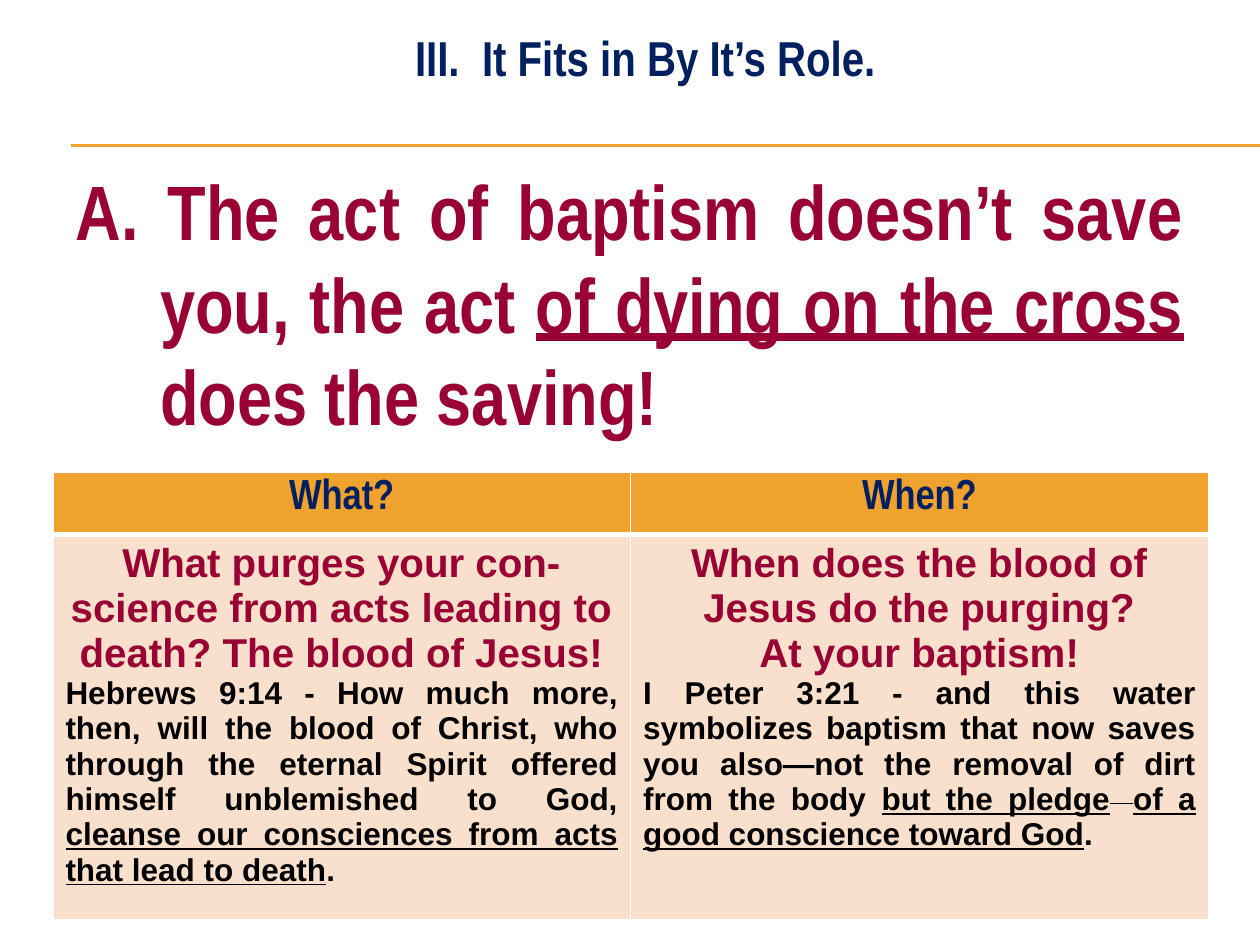
from lxml.etree import SubElement
from pptx import Presentation
from pptx.dml.color import RGBColor
from pptx.enum.shapes import MSO_CONNECTOR
from pptx.enum.text import MSO_ANCHOR, MSO_AUTO_SIZE, PP_ALIGN as ALIGN
from pptx.oxml.ns import qn
from pptx.util import Inches, Pt

NAVY = RGBColor(0x00, 0x20, 0x60)
MAROON = RGBColor(0x99, 0x00, 0x33)
ORANGE = RGBColor(0xF0, 0xA2, 0x2E)
PEACH = RGBColor(0xF9, 0xE0, 0xCD)
BLACK = RGBColor(0x00, 0x00, 0x00)
NARROW, ARIAL = "Arial Narrow", "Arial"

# Text styles: font, size, colour, alignment
TITLE = (NARROW, 28, NAVY, ALIGN.CENTER)
POINT = (NARROW, 44, MAROON, ALIGN.JUSTIFY)
HEADER = (NARROW, 24, NAVY, ALIGN.CENTER)
QUESTION = (ARIAL, 23, MAROON, ALIGN.CENTER)
VERSE = (ARIAL, 18, BLACK, ALIGN.JUSTIFY)

# Content: each paragraph is a style and its spans of (text, marks),
# where the mark u underlines and ^ raises
title_text = [(TITLE, [("III.  It Fits in By It’s Role.", "")])]
point_text = [(POINT, [
    ("A. The act of baptism doesn’t save you, the act ", ""),
    ("of dying on the cross", "u"),
    (" does the saving!", ""),
])]
table_rows = [
    [[(HEADER, [("What?", "")])], [(HEADER, [("When?", "")])]],
    [
        [
            (QUESTION, [("What purges your con-science from acts leading to "
                         "death? The blood of Jesus!", "")]),
            (VERSE, [
                ("Hebrews 9:14 - How much more, then, will the blood of Christ, "
                 "who through the eternal Spirit offered himself unblemished "
                 "to God, ", ""),
                ("cleanse our consciences from acts that lead to death", "u"),
                (".", ""),
            ]),
        ],
        [
            (QUESTION, [("When does the blood of Jesus do the purging?", "")]),
            (QUESTION, [("At your baptism!", "")]),
            (VERSE, [
                ("I Peter 3:21 - and this water symbolizes baptism that now "
                 "saves you also—not the removal of dirt from the body ", ""),
                ("but the pledge", "u"),
                ("  ", "u^"),
                ("of a good conscience toward God", "u"),
                (".", ""),
            ]),
        ],
    ],
]
row_heights = [0.49, 3.06]
row_fills = [ORANGE, PEACH]
bottom_widths = [3, 1]


def write(frame, paragraphs):
    for index, (style, spans) in enumerate(paragraphs):
        para = frame.add_paragraph() if index else frame.paragraphs[0]
        font = para.font
        font.name, size, font.color.rgb, para.alignment = style
        font.size, font.bold = Pt(size), True
        for text, marks in spans:
            span = para.add_run()
            span.text = text
            if "u" in marks:
                span.font.underline = True
            if "^" in marks:
                span._r.get_or_add_rPr().set("baseline", "30000")


def place(shape, left, top, width, height):
    shape.left, shape.top = Inches(left), Inches(top)
    shape.width, shape.height = Inches(width), Inches(height)


def add_borders(cell, bottom):
    props = cell._tc.get_or_add_tcPr()
    for side, width in (("L", 1), ("R", 1), ("T", 1), ("B", bottom)):
        line = SubElement(props, qn(f"a:ln{side}"), w=str(Pt(width)))
        fill = SubElement(line, qn("a:solidFill"))
        SubElement(fill, qn("a:srgbClr"), val="FFFFFF")


deck = Presentation()
deck.slide_width, deck.slide_height = Inches(10), Inches(7.5)
page = deck.slides.add_slide(deck.slide_layouts[1])

# Rules under the title
for y in (1.15, 1.16):
    rule = page.shapes.add_connector(
        MSO_CONNECTOR.STRAIGHT, Inches(0.56), Inches(y), Inches(10), Inches(y))
    rule.line.color.rgb, rule.line.width = ORANGE, Pt(0.75)
    SubElement(rule._element.spPr, qn("a:effectLst"))

# Title
title = page.shapes.title
place(title, 0.83, 0.17, 8.58, 0.57)
title.text_frame.auto_size = MSO_AUTO_SIZE.SHAPE_TO_FIT_TEXT
title.text_frame.vertical_anchor = MSO_ANCHOR.TOP
write(title.text_frame, title_text)

# Main point with a hanging indent
body = page.placeholders[1]
place(body, 0.5, 1.25, 9, 5.92)
body.text_frame.auto_size = MSO_AUTO_SIZE.NONE
write(body.text_frame, point_text)
indent = body.text_frame.paragraphs[0]._p.get_or_add_pPr()
indent.set("marL", str(Inches(0.67)))
indent.set("indent", str(-Inches(0.67)))
indent.insert(0, indent.makeelement(qn("a:buNone")))

# Table
table = page.shapes.add_table(
    2, 2, Inches(0.42), Inches(3.75), Inches(9.17), Inches(sum(row_heights))).table
for r, row in enumerate(table_rows):
    table.rows[r].height = Inches(row_heights[r])
    for c, paragraphs in enumerate(row):
        cell = table.cell(r, c)
        add_borders(cell, bottom_widths[r])
        cell.fill.solid()
        cell.fill.fore_color.rgb = row_fills[r]
        write(cell.text_frame, paragraphs)

deck.save("out.pptx")
